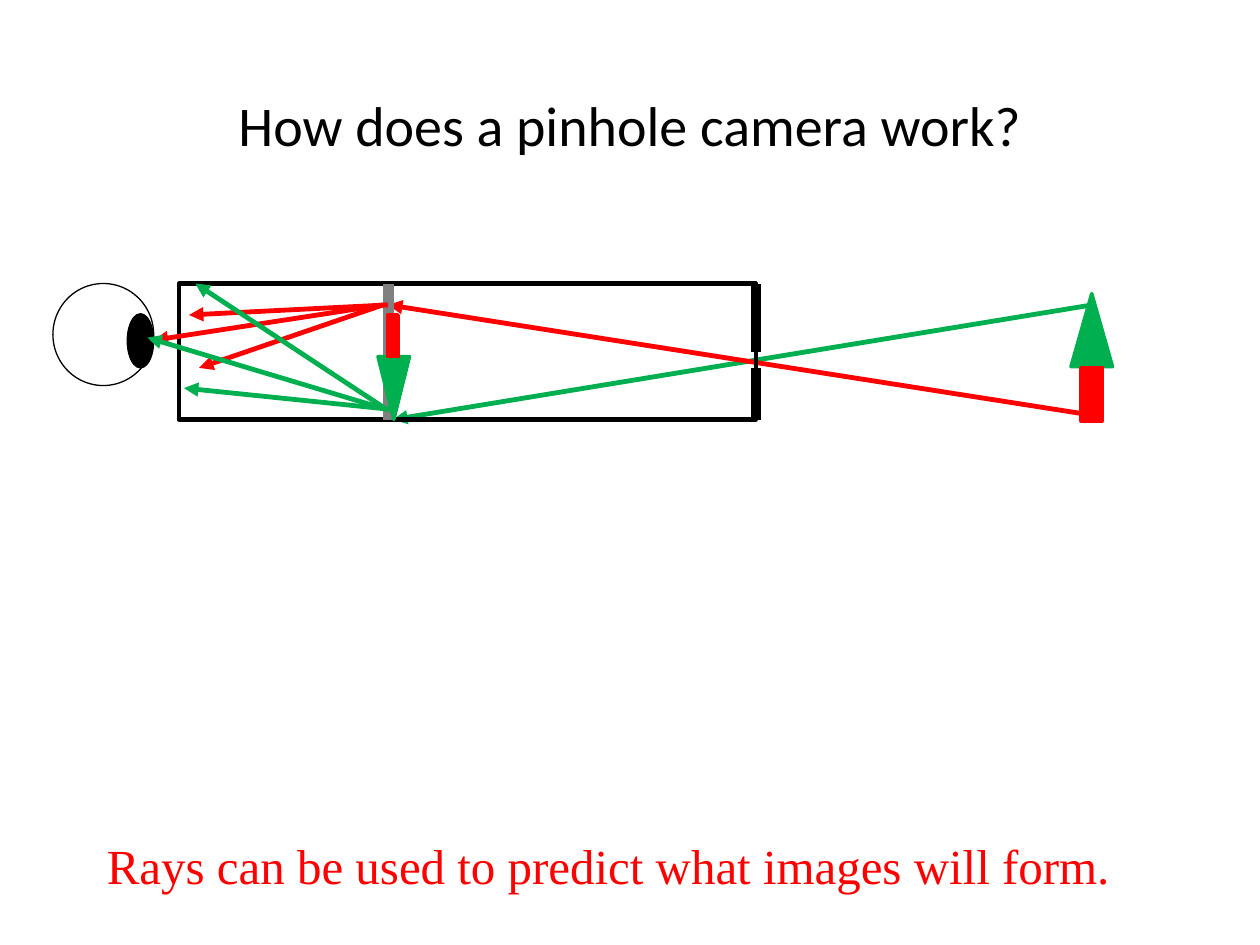
from dataclasses import dataclass

from lxml.etree import SubElement
from pptx import Presentation
from pptx.dml.color import RGBColor
from pptx.enum.shapes import MSO_CONNECTOR as Connector, MSO_SHAPE as Preset
from pptx.enum.text import MSO_ANCHOR as Anchor, PP_ALIGN as Align
from pptx.oxml.ns import qn
from pptx.util import Inches, Pt

COLORS = {
    "black": "000000",
    "white": "FFFFFF",
    "gray": "808080",
    "red": "FF0000",
    "green": "00B050",
}
RAY_WIDTH = 2.75
WALL_WIDTH = 6.25


@dataclass(frozen=True)
class Part:
    preset: Preset
    left: float
    top: float
    width: float
    height: float
    fill: str | None
    outline: str
    weight: float
    rotation: float = 0


@dataclass(frozen=True)
class Line:
    start: tuple[float, float]
    end: tuple[float, float]
    color: str
    weight: float = RAY_WIDTH
    arrow: bool = True


@dataclass(frozen=True)
class Label:
    left: float
    top: float
    width: float
    height: float
    text: str
    font: str
    size: float
    color: str
    align: Align
    anchor: Anchor


def rgb(name: str) -> RGBColor:
    return RGBColor.from_string(COLORS[name])


def style_line(item, color: str, weight: float, arrow: bool = False) -> None:
    item.line.color.rgb = rgb(color)
    item.line.width = Pt(weight)
    outline = item.element.spPr.get_or_add_ln()
    SubElement(outline, qn("a:round"))
    if arrow:
        SubElement(outline, qn("a:tailEnd"), type="triangle")


def draw_part(page, part: Part) -> None:
    shape = page.shapes.add_shape(
        part.preset,
        Inches(part.left),
        Inches(part.top),
        Inches(part.width),
        Inches(part.height),
    )
    shape.shadow.inherit = False
    shape.rotation = part.rotation
    if part.fill is None:
        shape.fill.background()
    else:
        shape.fill.solid()
        shape.fill.fore_color.rgb = rgb(part.fill)
    style_line(shape, part.outline, part.weight)


def draw_line(page, line: Line) -> None:
    connector = page.shapes.add_connector(
        Connector.STRAIGHT,
        *(Inches(value) for value in line.start + line.end),
    )
    style_line(connector, line.color, line.weight, line.arrow)
    SubElement(connector.element.spPr, qn("a:effectLst"))


def draw_label(page, label: Label) -> None:
    box = page.shapes.add_textbox(
        Inches(label.left),
        Inches(label.top),
        Inches(label.width),
        Inches(label.height),
    )
    frame = box.text_frame
    frame.word_wrap = True
    frame.vertical_anchor = label.anchor
    para = frame.paragraphs[0]
    para.alignment = label.align
    span = para.add_run()
    span.text = label.text
    span.font.name = label.font
    span.font.size = Pt(label.size)
    span.font.color.rgb = rgb(label.color)


def wall(x: float, top: float, bottom: float, color: str) -> Line:
    return Line((x, top), (x, bottom), color, WALL_WIDTH, arrow=False)


LABELS = [
    Label(0.5, 0.67, 9, 0.92, "How does a pinhole camera work?",
          "Calibri", 32, "black", Align.CENTER, Anchor.TOP),
    Label(0.75, 6.58, 8.42, 0.57, "Rays can be used to predict what images will form.",
          "Times New Roman", 28, "red", Align.LEFT, Anchor.MIDDLE),
]
EYE = [
    Part(Preset.OVAL, 0.42, 2.25, 0.8, 0.81, "white", "black", 0.75),
    Part(Preset.OVAL, 1.01, 2.49, 0.21, 0.43, "black", "black", 0.75),
]
OBJECT_RAYS = [
    Line((8.67, 2.42), (3.12, 3.33), "green"),
    Line((8.7, 3.3), (3.08, 2.42), "red"),
]
CAMERA = [Part(Preset.RECTANGLE, 1.42, 2.25, 4.58, 1.08, None, "black", 2.5)]
WALLS = [
    wall(3.08, 2.25, 3.33, "gray"),
    wall(6, 2.92, 3.33, "black"),
    wall(6, 2.25, 2.79, "black"),
]
OBJECT_AND_IMAGE = [
    Part(Preset.ISOSCELES_TRIANGLE, 8.5, 2.33, 0.33, 0.58, "green", "green", 2),
    Part(Preset.RECTANGLE, 8.58, 2.92, 0.17, 0.42, "red", "red", 2),
    Part(Preset.ISOSCELES_TRIANGLE, 3, 2.83, 0.25, 0.5, "green", "green", 2, 180),
    Part(Preset.RECTANGLE, 3.08, 2.5, 0.08, 0.33, "red", "red", 2),
]
SCREEN_RAYS = [
    Line((3.04, 2.42), (1.58, 2.92), "red"),
    Line((3.04, 2.42), (1.22, 2.7), "red"),
    Line((3.08, 2.42), (1.5, 2.5), "red"),
    Line((3.07, 3.25), (1.55, 2.25), "green"),
    Line((3.07, 3.25), (1.17, 2.68), "green"),
    Line((3.11, 3.25), (1.46, 3.08), "green"),
]


def main() -> None:
    deck = Presentation()
    deck.slide_width = Inches(10)
    deck.slide_height = Inches(7.5)
    page = deck.slides.add_slide(deck.slide_layouts[6])
    for label in LABELS:
        draw_label(page, label)
    for item in EYE + OBJECT_RAYS + CAMERA + WALLS + OBJECT_AND_IMAGE + SCREEN_RAYS:
        if isinstance(item, Part):
            draw_part(page, item)
        else:
            draw_line(page, item)
    deck.save("out.pptx")


if __name__ == "__main__":
    main()
